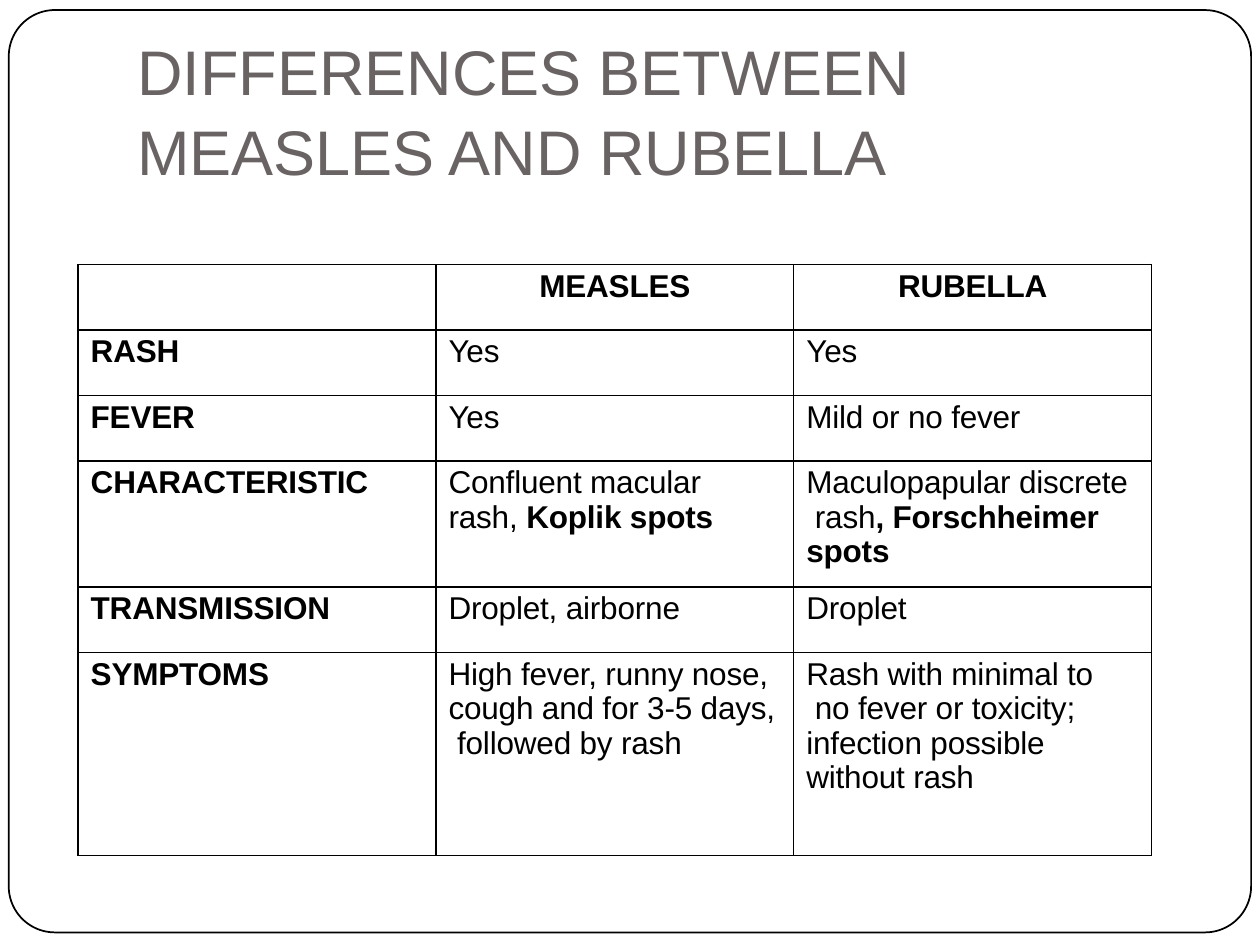
"""Build a slide with a table of the differences between measles and rubella."""
from lxml.etree import SubElement
from pptx import Presentation
from pptx.dml.color import RGBColor
from pptx.enum.shapes import MSO_SHAPE
from pptx.enum.text import MSO_ANCHOR, MSO_AUTO_SIZE, PP_ALIGN
from pptx.oxml.ns import qn
from pptx.util import Inches, Pt

BLACK = RGBColor(0, 0, 0)
GREY = RGBColor(0x69, 0x63, 0x63)
FONT = "Arial"
HEIGHTS = [0.52, 0.52, 0.52, 1, 0.52, 1.61]
ROWS = [
    ["", "*MEASLES*", "*RUBELLA*"],
    ["*RASH*", "Yes", "Yes"],
    ["*FEVER*", "Yes", "Mild or no fever"],
    ["*CHARACTERISTIC*", "Confluent macular\nrash, *Koplik spots*",
     "Maculopapular discrete\n rash*, Forschheimer spots*"],
    ["*TRANSMISSION*", "Droplet, airborne", "Droplet"],
    ["*SYMPTOMS*", "High fever, runny nose,\ncough and for 3-5 days,\n followed by rash",
     "Rash with minimal to\n no fever or toxicity;\ninfection possible\nwithout rash"],
]


def write(para, text):
    """Fill a paragraph; asterisks toggle bold and newlines break lines."""
    for index, part in enumerate(text.split("*")):
        for number, line in enumerate(part.split("\n")):
            if number:
                para.add_line_break()
            if line:
                run = para.add_run()
                run.text = line
                run.font.bold = index % 2 == 1
                run.font.size = Pt(18)
                run.font.name = FONT
                run.font.color.rgb = BLACK
                run.font._element.set("spc", "-10")


def outline(cell):
    """Draw a thin black line on each side of a cell."""
    props = cell._tc.get_or_add_tcPr()
    for side in ("a:lnL", "a:lnR", "a:lnT", "a:lnB"):
        line = SubElement(props, qn(side), w=str(Pt(1)))
        fill = SubElement(line, qn("a:solidFill"))
        SubElement(fill, qn("a:srgbClr"), val=str(BLACK))


deck = Presentation()
deck.slide_width, deck.slide_height = Inches(10), Inches(7.5)
slide = deck.slides.add_slide(deck.slide_layouts[5])

frame = slide.shapes.add_shape(
    MSO_SHAPE.ROUNDED_RECTANGLE, Inches(0.07), Inches(0.08), Inches(9.86), Inches(7.32))
frame.adjustments[0] = 0.05
frame.shadow.inherit = False
frame.fill.background()
frame.line.color.rgb = BLACK
frame.line.width = Pt(1)

title = slide.shapes.title
title.left, title.top = Inches(1.09), Inches(0.22)
title.width, title.height = Inches(7.83), Inches(1.23)
body = title.text_frame
body.text = "DIFFERENCES BETWEEN MEASLES AND RUBELLA"
body.word_wrap = True
body.auto_size = MSO_AUTO_SIZE.NONE
body.vertical_anchor = MSO_ANCHOR.TOP
body.margin_left = body.margin_right = body.margin_bottom = 0
body.margin_top = Inches(0.01)
head = body.paragraphs[0]
head.alignment = PP_ALIGN.LEFT
head.line_spacing = 1.05
head.font.size = Pt(36)
head.font.name = FONT
head.font.color.rgb = GREY

table = slide.shapes.add_table(
    len(ROWS), 3, Inches(0.62), Inches(2.1), Inches(8.52), Inches(sum(HEIGHTS))).table
table.first_row = table.horz_banding = False
for column in table.columns:
    column.width = Inches(2.84)
for r, texts in enumerate(ROWS):
    table.rows[r].height = Inches(HEIGHTS[r])
    for c, text in enumerate(texts):
        cell = table.cell(r, c)
        outline(cell)
        cell.fill.background()
        cell.margin_left = Inches(0.1) if r else 0
        cell.margin_right = cell.margin_bottom = 0
        cell.margin_top = Inches(0.04)
        para = cell.text_frame.paragraphs[0]
        para.alignment = PP_ALIGN.LEFT if r else PP_ALIGN.CENTER
        para.space_before = Pt(3.1)
        para.line_spacing = 0.98
        write(para, text)

deck.save("out.pptx")
